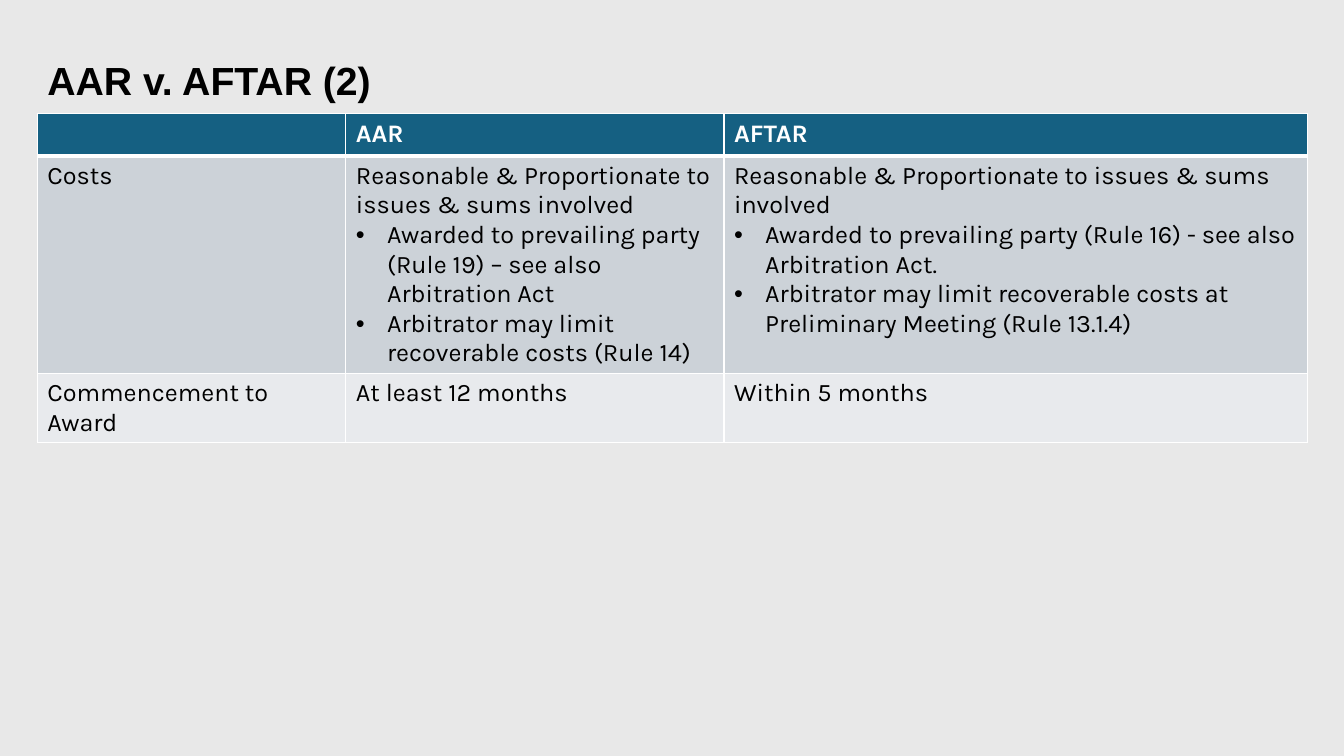
from dataclasses import dataclass

from lxml.etree import SubElement
from pptx import Presentation
from pptx.dml.color import RGBColor
from pptx.enum.text import MSO_ANCHOR, PP_ALIGN
from pptx.oxml.ns import qn
from pptx.slide import Slide
from pptx.table import _Cell
from pptx.text.text import _Paragraph
from pptx.util import Inches, Pt

HUES = {
    "page": "E8E8E8",
    "head": "156082",
    "dark": "CCD2D8",
    "light": "E8EAED",
    "text": "000000",
    "white": "FFFFFF",
}
WIDTHS = [3.06, 3.75, 5.79]
LEFT, WIDE = 0.37, sum(WIDTHS)


@dataclass
class Row:
    height: float
    fill: str
    cells: list[list[str]]
    ink: str = "text"
    bold: bool = False
    top: int = 1
    base: int = 1


ROWS = [
    Row(0.42, "head", [[""], ["AAR"], ["AFTAR"]], "white", True, base=3),
    Row(2.15, "dark", [
        ["Costs"],
        ["Reasonable & Proportionate to issues & sums involved",
         "Awarded to prevailing party (Rule 19) – see also Arbitration Act",
         "Arbitrator may limit recoverable costs (Rule 14)"],
        ["Reasonable & Proportionate to issues & sums involved",
         "Awarded to prevailing party (Rule 16) - see also Arbitration Act.",
         "Arbitrator may limit recoverable costs at Preliminary Meeting (Rule 13.1.4)"],
    ], top=3),
    Row(0.68, "light", [["Commencement to Award"], ["At least 12 months"], ["Within 5 months"]]),
]


def style(para: _Paragraph, face: str, size: int, ink: str, bold: bool) -> None:
    font = para.font
    font.name, font.size, font.bold = face, Pt(size), bold
    font.color.rgb = RGBColor.from_string(HUES[ink])


def bullet(para: _Paragraph) -> None:
    props = para._p.get_or_add_pPr()
    props.set("marL", str(Inches(0.31)))
    props.set("indent", str(Inches(-0.31)))
    SubElement(props, qn("a:buFont"), typeface="Arial")
    SubElement(props, qn("a:buChar"), char="•")


def border(cell: _Cell, row: Row) -> None:
    props = cell._tc.get_or_add_tcPr()
    for side, size in {"L": 1, "R": 1, "T": row.top, "B": row.base}.items():
        line = SubElement(props, qn(f"a:ln{side}"), w=str(Pt(size)))
        fill = SubElement(line, qn("a:solidFill"))
        SubElement(fill, qn("a:srgbClr"), val=HUES["white"])


def write(cell: _Cell, lines: list[str], row: Row) -> None:
    border(cell, row)
    cell.fill.solid()
    cell.fill.fore_color.rgb = RGBColor.from_string(HUES[row.fill])
    cell.text = "\n".join(lines)
    for spot, para in enumerate(cell.text_frame.paragraphs):
        if spot:
            bullet(para)
        style(para, "Karla", 18, row.ink, row.bold)


def add_title(slide: Slide) -> None:
    title = slide.shapes.title
    title.left, title.top = Inches(LEFT), Inches(0.4)
    title.width, title.height = Inches(WIDE), Inches(0.84)
    frame = title.text_frame
    frame.text = "AAR v. AFTAR (2)"
    frame.vertical_anchor = MSO_ANCHOR.MIDDLE
    para = frame.paragraphs[0]
    para.alignment = PP_ALIGN.LEFT
    para.line_spacing = 0.9
    style(para, "Arial", 28, "text", True)


def add_grid(slide: Slide) -> None:
    tall = sum(row.height for row in ROWS)
    grid = slide.shapes.add_table(
        len(ROWS), len(WIDTHS), Inches(LEFT), Inches(1.13), Inches(WIDE), Inches(tall)
    ).table
    for col, width in zip(grid.columns, WIDTHS):
        col.width = Inches(width)
    for line, row in zip(grid.rows, ROWS):
        line.height = Inches(row.height)
        for cell, lines in zip(line.cells, row.cells):
            write(cell, lines, row)


def main() -> None:
    deck = Presentation()
    deck.slide_width, deck.slide_height = Inches(13.33), Inches(7.5)
    slide = deck.slides.add_slide(deck.slide_layouts[5])
    back = slide.background.fill
    back.solid()
    back.fore_color.rgb = RGBColor.from_string(HUES["page"])
    add_title(slide)
    add_grid(slide)
    deck.save("out.pptx")


if __name__ == "__main__":
    main()
